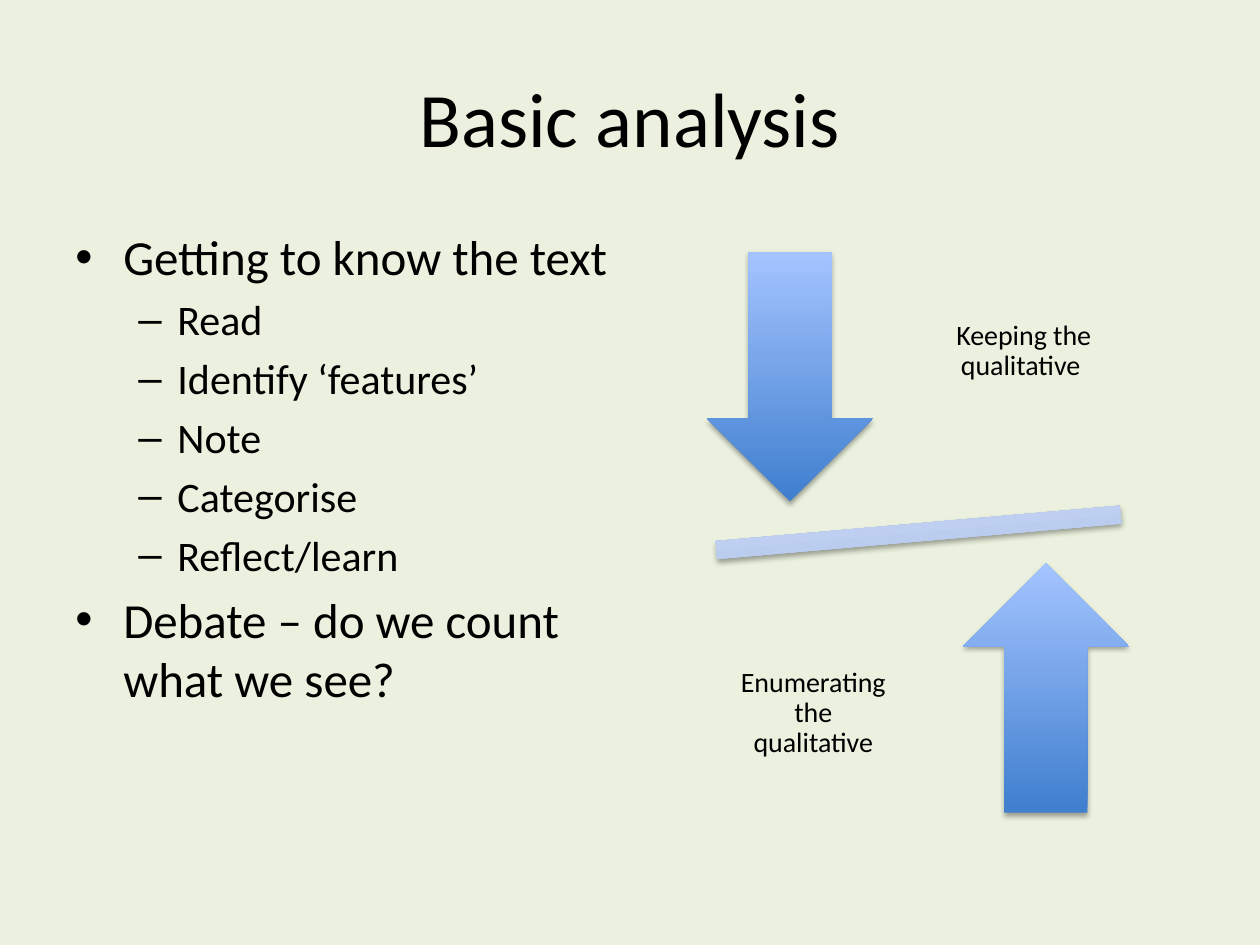
from lxml.etree import SubElement
from pptx import Presentation
from pptx.dml.color import RGBColor
from pptx.enum.shapes import MSO_SHAPE as Shape
from pptx.enum.text import MSO_ANCHOR as Anchor, PP_ALIGN as Align
from pptx.oxml.ns import qn
from pptx.util import Inches, Pt

ARROW_COLORS = ("3F7FCE", "A4C4FF")
BAR_COLORS = ("ADBFE1", "CCDDFF")

# Text, level
BULLETS = [
    ("Getting to know the text", 0),
    ("Read", 1),
    ("Identify ‘features’", 1),
    ("Note", 1),
    ("Categorise", 1),
    ("Reflect/learn", 1),
    ("Debate – do we count what we see?", 0),
]
# Bullet, left margin, hanging indent, text size for each level
LEVELS = [("•", 0.38, 0.38, 28), ("–", 0.81, 0.31, 24)]


def rgb(value):
    return RGBColor.from_string(value)


def write(p, text, size, color="000000", align=None, line=None, before=0, after=0):
    """Put formatted text in a paragraph."""
    r = p.add_run()
    r.text = text
    r.font.name = "Calibri"
    r.font.size = Pt(size)
    r.font.color.rgb = rgb(color)
    p.alignment = align
    p.line_spacing = line
    p.space_before = Pt(before)
    p.space_after = Pt(after)


def add_box(s, x, y, w, h):
    tf = s.shapes.add_textbox(Inches(x), Inches(y), Inches(w), Inches(h)).text_frame
    tf.word_wrap = True
    return tf


def add_bullets(s, x, y, w, h):
    tf = add_box(s, x, y, w, h)
    for i, (text, level) in enumerate(BULLETS):
        char, margin, hanging, size = LEVELS[level]
        p = tf.paragraphs[0] if i == 0 else tf.add_paragraph()
        write(p, text, size, align=Align.LEFT, before=size * 0.2)
        p.level = level
        pPr = p._p.get_or_add_pPr()
        pPr.set("marL", str(Inches(margin)))
        pPr.set("indent", str(-Inches(hanging)))
        SubElement(pPr, qn("a:buFont"), typeface="Arial")
        SubElement(pPr, qn("a:buChar"), char=char)


def add_label(s, text, x, y):
    tf = add_box(s, x, y, 1.41, 2.08)
    tf.vertical_anchor = Anchor.MIDDLE
    tf.margin_left = tf.margin_right = Inches(0.12)
    tf.margin_top = tf.margin_bottom = Inches(0.12)
    write(tf.paragraphs[0], text, 16, align=Align.CENTER, line=0.9, after=5.6)


def add_gradient_shape(s, kind, x, y, w, h, colors, rotation=0):
    sp = s.shapes.add_shape(kind, Inches(x), Inches(y), Inches(w), Inches(h))
    sp.rotation = rotation
    sp.line.fill.background()
    # Dark at the bottom, light at the top
    sp.fill.gradient()
    sp.fill.gradient_angle = 90
    for stop, color, position in zip(sp.fill.gradient_stops, colors, (0, 1)):
        stop.color.rgb = rgb(color)
        stop.position = position
    # Soft shadow straight below
    sp.shadow.inherit = False
    effects = sp._element.spPr.find(qn("a:effectLst"))
    shadow = SubElement(effects, qn("a:outerShdw"), blurRad=str(Pt(3.1)),
                        dist=str(Pt(1.8)), dir="5400000", rotWithShape="0")
    black = SubElement(shadow, qn("a:srgbClr"), val="000000")
    SubElement(black, qn("a:alpha"), val="35000")


def main():
    prs = Presentation()
    prs.slide_width, prs.slide_height = Inches(10), Inches(7.5)
    s = prs.slides.add_slide(prs.slide_layouts[5])
    s.background.fill.solid()
    s.background.fill.fore_color.rgb = rgb("EBF1DE")

    # Title
    title = s.shapes.title
    title.left, title.top = Inches(0.5), Inches(0.3)
    title.width, title.height = Inches(9), Inches(1.25)
    title.text_frame.vertical_anchor = Anchor.MIDDLE
    write(title.text_frame.paragraphs[0], "Basic analysis", 44, align=Align.CENTER)

    add_bullets(s, 0.5, 1.75, 4.42, 4.95)

    # Two opposing arrows around a tilted bar
    add_gradient_shape(s, Shape.MATH_MINUS, 5.1, 3.92, 4.38, 0.61, BAR_COLORS, rotation=355)
    add_gradient_shape(s, Shape.DOWN_ARROW, 5.61, 2, 1.32, 1.98, ARROW_COLORS)
    add_label(s, "Keeping the qualitative ", 7.42, 1.75)
    add_gradient_shape(s, Shape.UP_ARROW, 7.64, 4.47, 1.32, 1.98, ARROW_COLORS)
    add_label(s, "Enumerating the qualitative", 5.75, 4.62)

    prs.save("out.pptx")


if __name__ == "__main__":
    main()
